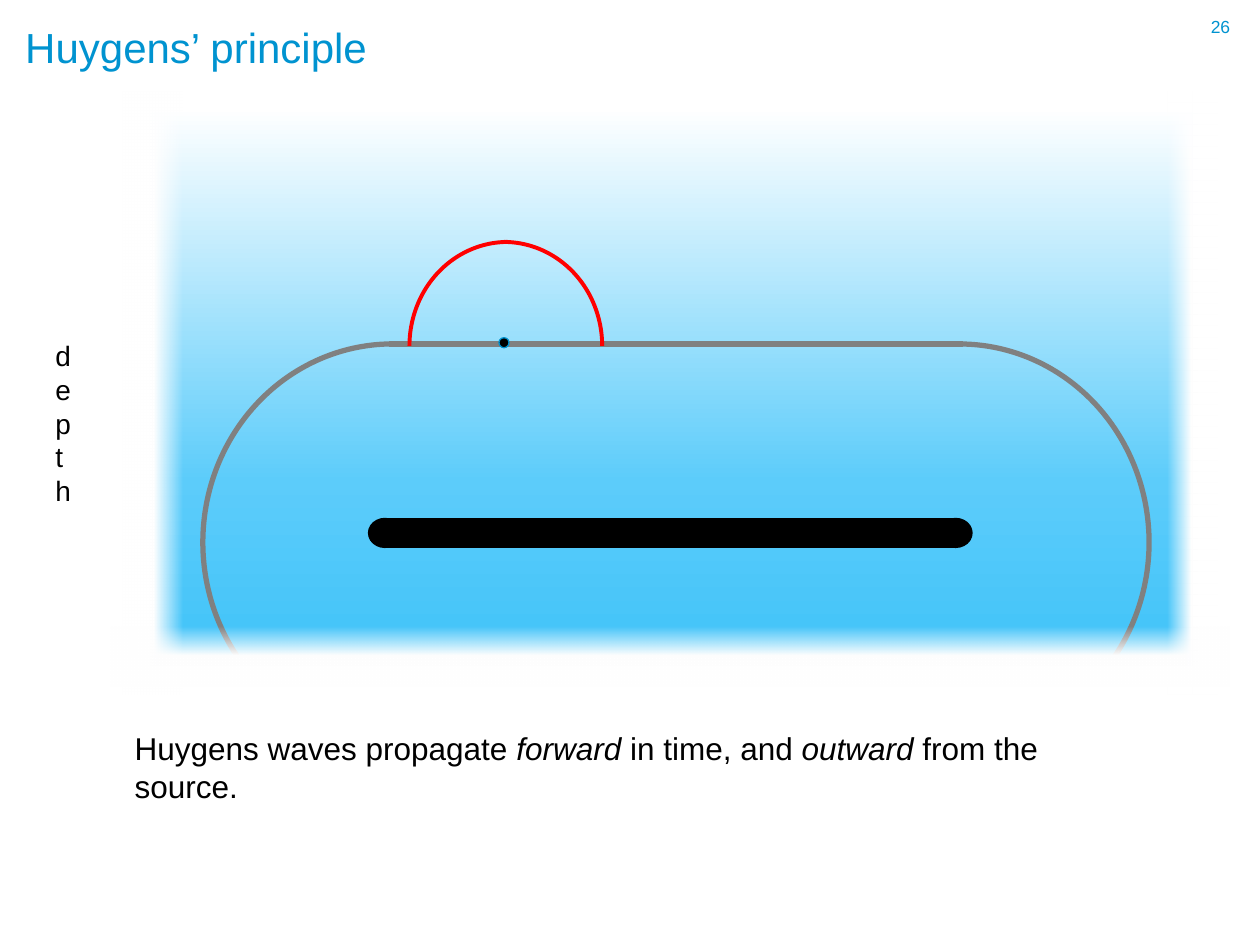
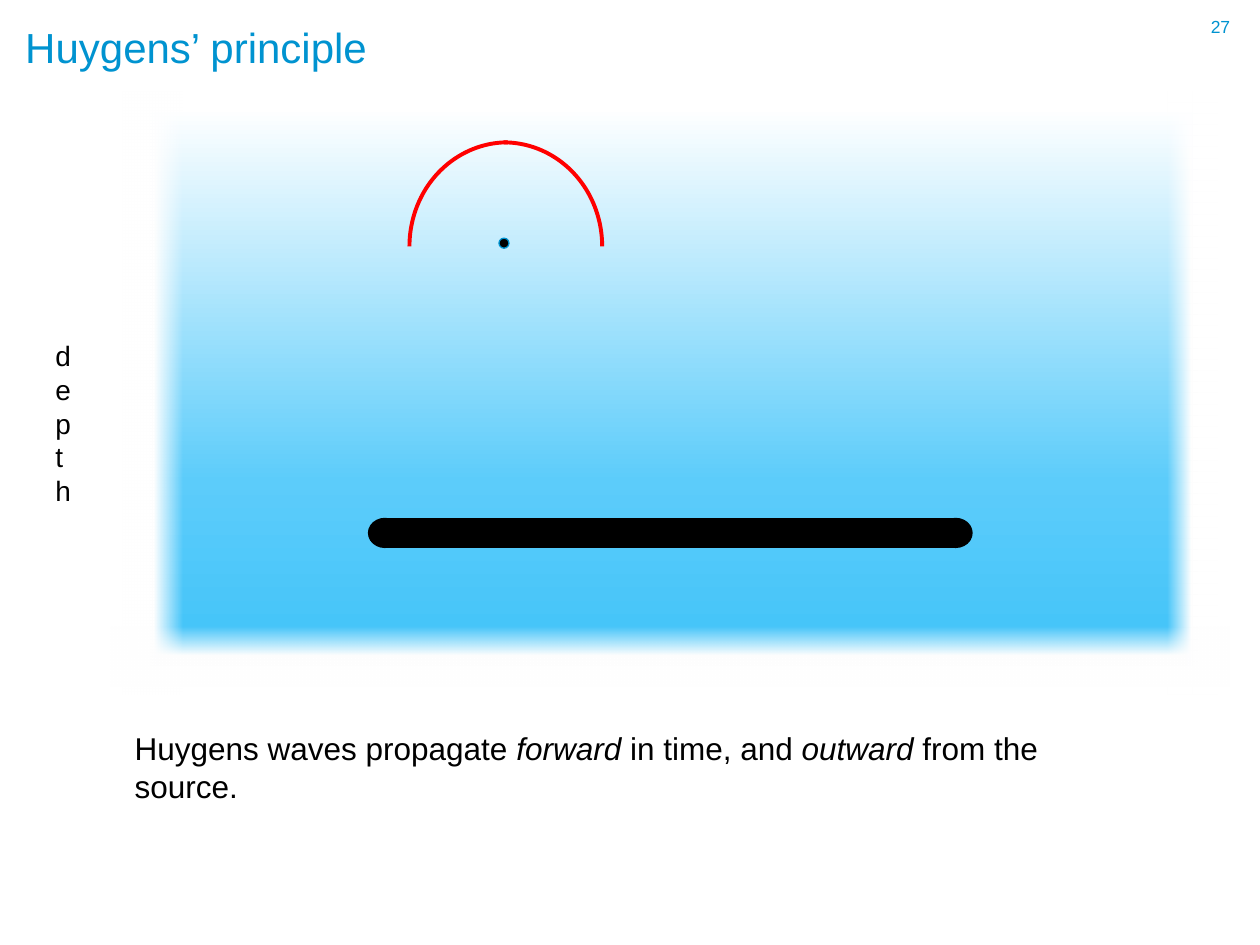
from dataclasses import dataclass

from lxml.etree import SubElement as Sub
from pptx import Presentation
from pptx.dml.color import RGBColor as Rgb
from pptx.enum.shapes import MSO_CONNECTOR as Link, MSO_SHAPE as Form
from pptx.enum.text import MSO_ANCHOR as Anchor, PP_ALIGN as Align
from pptx.oxml.ns import qn
from pptx.util import Pt

PX = 9144


@dataclass(frozen=True)
class Theme:
    """Colours, font and type sizes of the deck."""
    font: str = "Arial"
    blue: str = "0093D0"
    black: str = "000000"
    grey: str = "808080"
    red: str = "FF0000"
    white: str = "FFFFFF"
    deep: str = "40C3F9"
    mid: str = "5CCCFA"
    head: int = 24
    body: int = 18
    label: int = 16
    small: int = 10


def write(frame, text, size, color, font, space=None, inset=None, anchor=Anchor.TOP):
    """Fill a frame with text in which *stars* mark italics."""
    frame.word_wrap = True
    frame.vertical_anchor = anchor
    if inset is not None:
        frame.margin_left = frame.margin_right = inset
        frame.margin_top = frame.margin_bottom = inset
    para = frame.paragraphs[0]
    para.alignment = Align.LEFT
    if space:
        para.line_spacing = space
    for i, part in enumerate(text.split("*")):
        run = para.add_run()
        run.text = part
        run.font.name = font
        run.font.size = Pt(size)
        run.font.color.rgb = Rgb.from_string(color)
        if i % 2:
            run.font.italic = True


class Deck:
    """Holds the style and the current slide."""

    def __init__(self, theme):
        """Open an empty deck."""
        self.theme = theme
        self.prs = Presentation()
        self.prs.slide_width, self.prs.slide_height = 1000 * PX, 750 * PX
        self.slide = None

    def page(self, title, num):
        """Start a slide with its title and page number."""
        look = self.theme
        self.slide = self.prs.slides.add_slide(self.prs.slide_layouts[5])
        head = self.slide.shapes.title
        head.left, head.top, head.width, head.height = self.box(20, 19, 873, 41)
        write(head.text_frame, title, look.head, look.blue, look.font,
              space=0.9, inset=0, anchor=Anchor.MIDDLE)
        self.text(str(num), (961, 13, 30, 26), look.small, look.blue,
                  space=Pt(12), inset=0)

    def box(self, *sides):
        """Turn px into EMU."""
        return [side * PX for side in sides]

    def text(self, text, at, size, color, vert=None, **form):
        """Add a text box."""
        frame = self.slide.shapes.add_textbox(*self.box(*at)).text_frame
        write(frame, text, size, color, self.theme.font, **form)
        if vert:
            frame._txBody.bodyPr.set("vert", vert)

    def shape(self, form, at, fill=None, line=None, width=0.75):
        """Add a preset shape with a plain fill and line."""
        item = self.slide.shapes.add_shape(form, *self.box(*at))
        item.shadow.inherit = False
        if fill:
            item.fill.solid()
            item.fill.fore_color.rgb = Rgb.from_string(fill)
        else:
            item.fill.background()
        if line:
            item.line.color.rgb = Rgb.from_string(line)
            item.line.width = Pt(width)
        else:
            item.line.fill.background()
        return item

    def blend(self, at, stops, angle):
        """Add a gradient panel from (percent, colour, opacity) stops."""
        item = self.shape(Form.RECTANGLE, at)
        item.fill.gradient()
        grad = item._element.spPr.find(qn("a:gradFill"))
        for child in list(grad):
            grad.remove(child)
        group = Sub(grad, qn("a:gsLst"))
        for place, color, solid in stops:
            stop = Sub(group, qn("a:gs"), pos=str(place * 1000))
            tint = Sub(stop, qn("a:srgbClr"), val=color)
            if solid < 100:
                Sub(tint, qn("a:alpha"), val=str(solid * 1000))
        Sub(grad, qn("a:lin"), ang=str(angle * 60000), scaled="0")

    def fade(self, at, angle):
        """Add a panel that fades from clear to white."""
        white = self.theme.white
        self.blend(at, [(0, white, 0), (48, white, 100), (100, white, 100)], angle)

    def arc(self, at, start, end, color, width):
        """Add an arc between two angles in degrees."""
        item = self.shape(Form.ARC, at, line=color, width=width)
        item.adjustments[0], item.adjustments[1] = start * 0.6, end * 0.6

    def line(self, left, right, y, color, width):
        """Add a level line."""
        item = self.slide.shapes.add_connector(
            Link.STRAIGHT, *self.box(left, y, right, y))
        item.line.color.rgb = Rgb.from_string(color)
        item.line.width = Pt(width)
        Sub(item._element.spPr, qn("a:effectLst"))

    def source(self):
        """Draw the water and the long source in it."""
        look = self.theme
        self.blend((119, 85, 832, 444),
                   [(0, look.deep, 100), (33, look.mid, 100), (100, look.white, 100)], 270)
        self.line(306, 760, 423, look.black, 17.25)
        for left in (292, 745):
            self.shape(Form.OVAL, (left, 411, 27, 24), look.black)

    def front(self):
        """Draw the wave front around the source."""
        grey = self.theme.grey
        self.line(309, 764, 273, grey, 3)
        self.arc((611, 273, 301, 315), 270, 39, grey, 3)
        self.arc((161, 273, 301, 315), 141, 270, grey, 3)

    def edges(self):
        """Soften the sides and the bottom of the water."""
        self.fade((97, 73, 48, 478), 180)
        self.fade((927, 73, 39, 478), 0)
        self.fade((88, 497, 888, 48), 90)

    def notes(self):
        """Write the caption and the depth label."""
        look = self.theme
        self.text("Huygens waves propagate *forward* in time, and *outward* from the source.",
                  (97, 574, 799, 71), look.body, look.black)
        self.text("depth", (34, 264, 49, 165), look.label, look.black, vert="wordArtVert")

    def wave(self, y):
        """Draw a point at height y and the wave it sends out."""
        look = self.theme
        self.shape(Form.OVAL, (396, y - 4, 8, 8), look.black, look.blue)
        for left, start in ((322, 270), (325, 180)):
            self.arc((left, y - 80, 156, 165), start, (start + 90) % 360, look.red, 2.25)


def main():
    """Build and save the deck."""
    deck = Deck(Theme())
    for num, y, ring in ((26, 272, True), (27, 193, False)):
        deck.page("Huygens’ principle", num)
        deck.source()
        if ring:
            deck.front()
        deck.edges()
        deck.notes()
        deck.wave(y)
    deck.prs.save("out.pptx")


if __name__ == "__main__":
    main()
